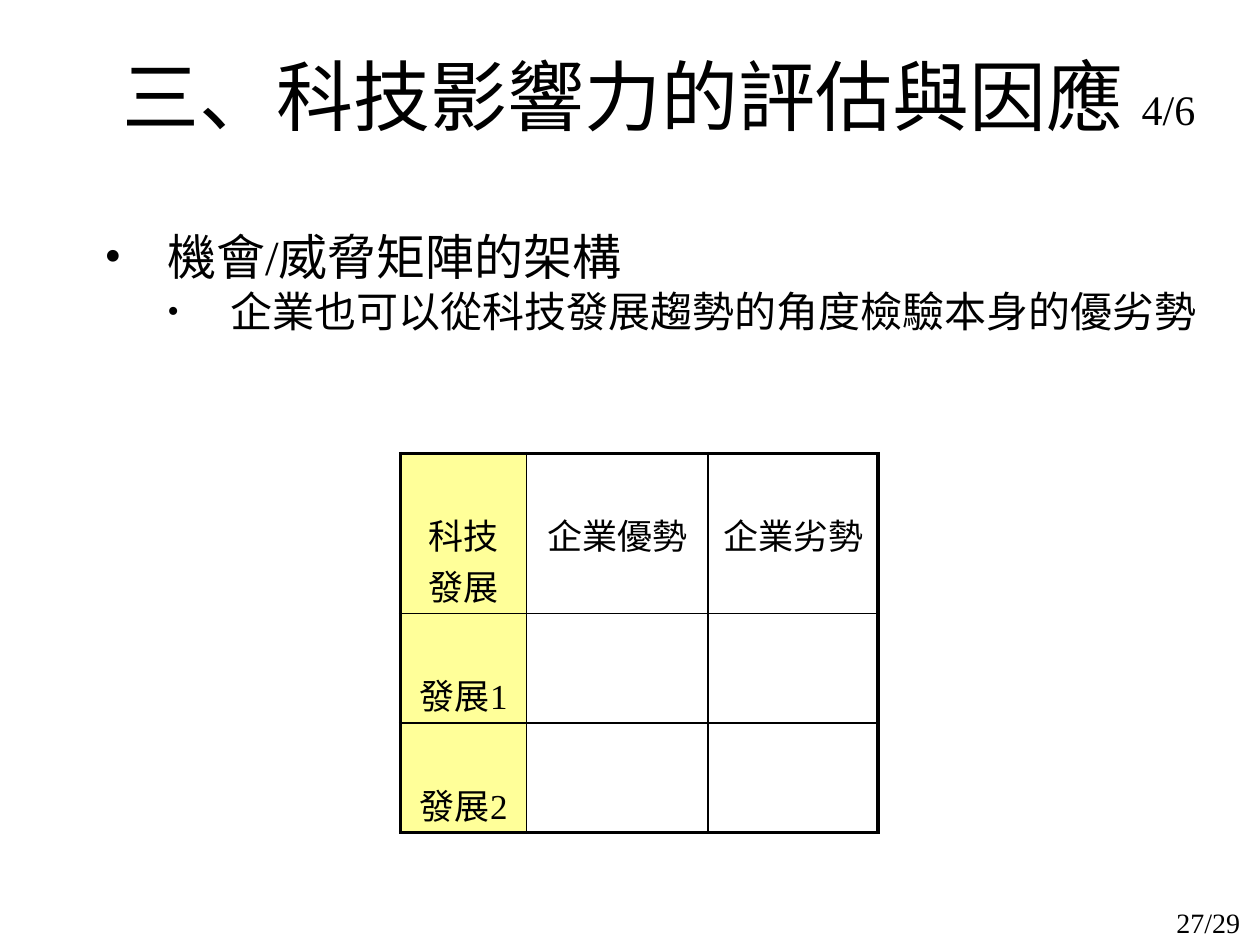
from lxml import etree
from pptx import Presentation
from pptx.dml.color import RGBColor
from pptx.enum.text import MSO_ANCHOR, PP_ALIGN
from pptx.oxml.ns import qn
from pptx.util import Inches, Pt

COLORS = {"ink": "000000", "paper": "FFFFFF", "label": "FFFF99"}
FONT = "Times New Roman"


def add_span(para, text, size):
    span = para.add_run()
    span.text = text
    span.font.name = FONT
    span.font.size = Pt(size)
    span.font.color.rgb = RGBColor.from_string(COLORS["ink"])


def add_border(cell, side, width):
    line = etree.Element(qn(f"a:{side}"), w=str(Pt(width)))
    fill = etree.SubElement(line, qn("a:solidFill"))
    etree.SubElement(fill, qn("a:srgbClr"), val=COLORS["ink"])
    return line


deck = Presentation()
deck.slide_width = Inches(10)
deck.slide_height = Inches(7.5)
page = deck.slides.add_slide(deck.slide_layouts[5])

title = page.shapes.title
title.left, title.top = Inches(0.73), Inches(0.13)
title.width, title.height = Inches(9), Inches(1.25)
title.text_frame.vertical_anchor = MSO_ANCHOR.MIDDLE
para = title.text_frame.paragraphs[0]
para.alignment = PP_ALIGN.CENTER
add_span(para, "三、科技影響力的評估與因應 ", 44)
add_span(para, "4/6", 24)

body = page.shapes.add_textbox(Inches(0.73), Inches(1.75), Inches(9), Inches(1.45))
body.text_frame.word_wrap = True
points = [("機會/威脅矩陣的架構", 28, 100), ("企業也可以從科技發展趨勢的角度檢驗本身的優劣勢", 24, 80)]
for level, (text, size, bullet_size) in enumerate(points):
    para = body.text_frame.add_paragraph() if level else body.text_frame.paragraphs[0]
    para.level = level
    props = para._p.get_or_add_pPr()
    props.set("marL", str(Inches(0.5 * (level + 1))))
    props.set("indent", str(Inches(-0.5)))
    etree.SubElement(props, qn("a:buSzPct"), val=str(bullet_size * 1000))
    etree.SubElement(props, qn("a:buFont"), typeface=FONT)
    etree.SubElement(props, qn("a:buChar"), char="•")
    add_span(para, text, size)

columns = [1, 1.44, 1.35]
rows = [1.27, 0.87, 0.87]
labels = [["科技發展", "企業優勢", "企業劣勢"], ["發展1", "", ""], ["發展2", "", ""]]
matrix = page.shapes.add_table(
    len(rows), len(columns), Inches(3.18), Inches(3.6), Inches(sum(columns)), Inches(sum(rows))
).table
for column, width in zip(matrix.columns, columns):
    column.width = Inches(width)
for row, height in zip(matrix.rows, rows):
    row.height = Inches(height)
for r, texts in enumerate(labels):
    for c, text in enumerate(texts):
        cell = matrix.cell(r, c)
        cell.margin_top = Inches(0.44)
        cell.margin_bottom = Inches(0.02)
        outer = {"lnL": c == 0, "lnR": c == 2, "lnT": r == 0, "lnB": r == 2}
        for side, is_outer in outer.items():
            cell._tc.get_or_add_tcPr().append(add_border(cell, side, 2.25 if is_outer else 1))
        cell.fill.solid()
        cell.fill.fore_color.rgb = RGBColor.from_string(COLORS["paper" if c else "label"])
        para = cell.text_frame.paragraphs[0]
        para.alignment = PP_ALIGN.CENTER
        if text:
            add_span(para, text, 20)

number = page.shapes.add_textbox(Inches(9.1), Inches(7.14), Inches(0.84), Inches(0.32))
number.text_frame.word_wrap = True
para = number.text_frame.paragraphs[0]
para.alignment = PP_ALIGN.RIGHT
add_span(para, "27/29", 16)

deck.save("out.pptx")
